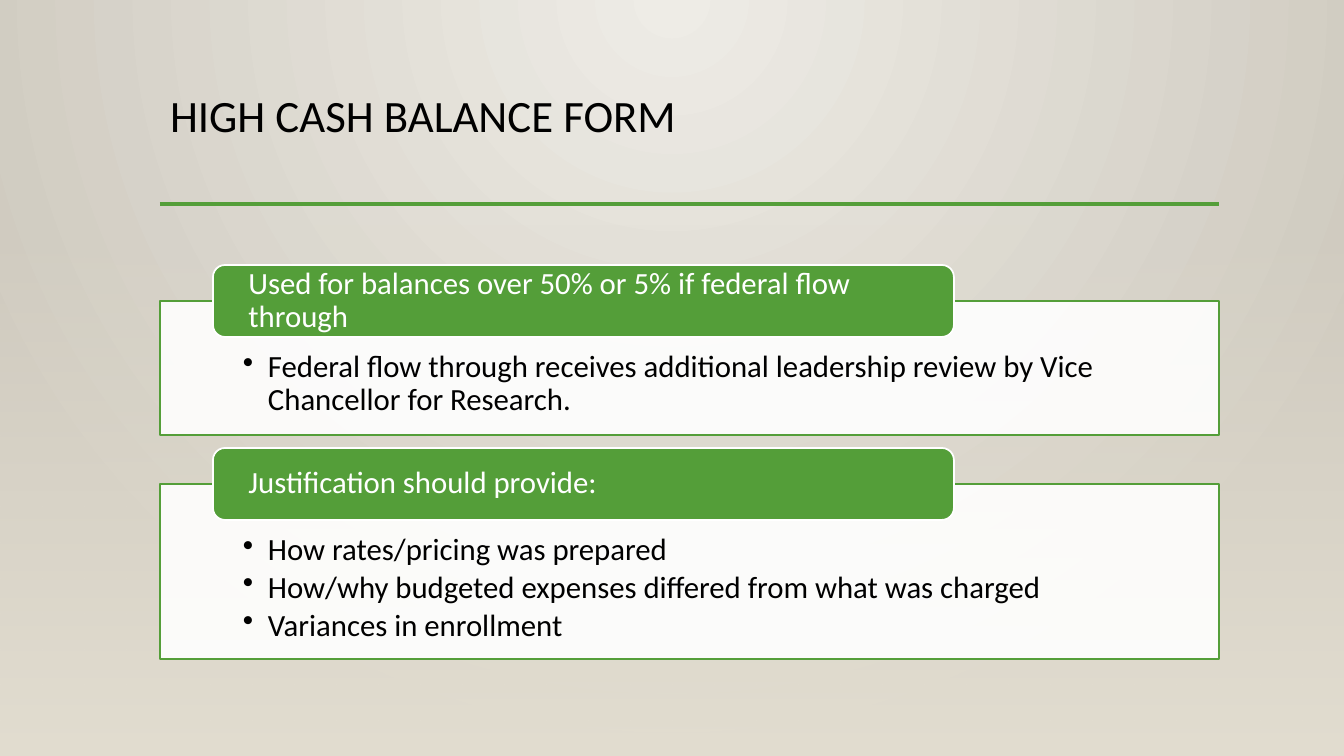
from dataclasses import dataclass

from lxml.etree import SubElement
from pptx import Presentation
from pptx.dml.color import RGBColor
from pptx.enum.shapes import MSO_CONNECTOR as Connector, MSO_SHAPE as Preset
from pptx.enum.text import MSO_ANCHOR as Anchor, MSO_AUTO_SIZE as AutoSize, PP_ALIGN as Align
from pptx.oxml.ns import qn
from pptx.util import Pt

TITLE = "HIGH CASH BALANCE FORM"
SECTIONS = [
    ("Used for balances over 50% or 5% if federal flow through", 134, [
        "Federal flow through receives additional leadership review by Vice Chancellor for Research.",
    ]),
    ("Justification should provide:", 175, [
        "How rates/pricing was prepared",
        "How/why budgeted expenses differed from what was charged",
        "Variances in enrollment",
    ]),
]


@dataclass(frozen=True)
class Theme:
    font: str = "Calibri"
    title_size: int = 32
    body_size: int = 22
    ink: str = "000000"
    paper: str = "FFFFFF"
    accent: str = "549E39"
    glow: tuple = ("EEECE6", "CEC9BE")
    floor: str = "E3DED1"


THEME = Theme()
WIDTH, HEIGHT = 1344, 756
LEFT, CONTENT_WIDTH = 160, 1059
TITLE_TOP, RULE_Y, FLOOR_TOP = 89, 204, 223
FIRST_CARD_TOP, CARD_GAP = 301, 49
TAB_LEFT, TAB_WIDTH, TAB_HEIGHT = 213, 741, 72
BULLET_INDENT = 25
SCALE = 12192000 / WIDTH


def px(length):
    return round(length * SCALE)


def rgb(code):
    return RGBColor.from_string(code)


def set_alpha(color, percent):
    SubElement(color, qn("a:alpha"), val=str(percent * 1000))


def fill_gradient(fill, colors):
    fill.gradient()
    for stop, code in zip(fill.gradient_stops, colors):
        stop.color.rgb = rgb(code)


def add_block(slide, preset, box, fill, line):
    block = slide.shapes.add_shape(preset, *map(px, box))
    block.shadow.inherit = False
    block.fill.solid()
    block.fill.fore_color.rgb = rgb(fill)
    block.line.color.rgb = rgb(line)
    block.line.width = Pt(1.25)
    return block


def write(shape, lines, size, color, insets, anchor, space_after=0, bulleted=False):
    frame = shape.text_frame
    frame.text = "\n".join(lines)
    frame.word_wrap = True
    frame.auto_size = AutoSize.NONE
    frame.vertical_anchor = anchor
    frame.margin_left, frame.margin_top, frame.margin_right, frame.margin_bottom = map(px, insets)
    for paragraph in frame.paragraphs:
        if bulleted:
            props = paragraph._p.get_or_add_pPr()
            props.set("marL", str(px(BULLET_INDENT)))
            props.set("indent", str(-px(BULLET_INDENT)))
            SubElement(props, qn("a:buChar"), char="•")
        paragraph.alignment = Align.LEFT
        paragraph.line_spacing = 0.9
        paragraph.space_after = Pt(space_after)
        for run in paragraph.runs:
            run.font.name = THEME.font
            run.font.size = Pt(size)
            run.font.color.rgb = rgb(color)


def paint_backdrop(slide):
    fill_gradient(slide.background.fill, THEME.glow)
    glow = slide.element.find(".//" + qn("a:gradFill"))
    glow.remove(glow.find(qn("a:lin")))
    radial = SubElement(glow, qn("a:path"), path="circle")
    SubElement(radial, qn("a:fillToRect"), l="43000", t="0", r="43000", b="100000")

    floor = slide.shapes.add_shape(
        Preset.RECTANGLE, *map(px, (0, FLOOR_TOP, WIDTH, HEIGHT - FLOOR_TOP)))
    floor.shadow.inherit = False
    floor.line.fill.background()
    fill_gradient(floor.fill, (THEME.floor, THEME.floor))
    floor.fill.gradient_angle = 270
    set_alpha(floor._element.find(".//" + qn("a:gs"))[0], 0)


def add_heading(slide):
    title = slide.shapes.title
    title.left, title.top, title.width, title.height = map(
        px, (LEFT, TITLE_TOP, CONTENT_WIDTH, RULE_Y - TITLE_TOP))
    write(title, [TITLE], THEME.title_size, THEME.ink, (10, 5, 10, 5), Anchor.TOP)
    rule = slide.shapes.add_connector(
        Connector.STRAIGHT, *map(px, (LEFT, RULE_Y, LEFT + CONTENT_WIDTH, RULE_Y)))
    rule.line.color.rgb = rgb(THEME.accent)
    rule.line.width = Pt(2.5)
    SubElement(rule._element.spPr, qn("a:effectLst"))


def add_section(slide, top, heading, height, points):
    card = add_block(slide, Preset.RECTANGLE, (LEFT, top, CONTENT_WIDTH, height),
                     THEME.paper, THEME.accent)
    set_alpha(card._element.spPr.find(qn("a:solidFill"))[0], 90)
    write(card, points, THEME.body_size, THEME.ink, (83, 50, 83, 17), Anchor.TOP,
          space_after=3.3, bulleted=True)
    tab = add_block(slide, Preset.ROUNDED_RECTANGLE,
                    (TAB_LEFT, top - TAB_HEIGHT / 2, TAB_WIDTH, TAB_HEIGHT),
                    THEME.accent, THEME.paper)
    write(tab, [heading], THEME.body_size, THEME.paper, (32, 0, 32, 0), Anchor.MIDDLE)


def main():
    deck = Presentation()
    deck.slide_width, deck.slide_height = px(WIDTH), px(HEIGHT)
    slide = deck.slides.add_slide(deck.slide_layouts[5])
    paint_backdrop(slide)
    add_heading(slide)
    top = FIRST_CARD_TOP
    for heading, height, points in SECTIONS:
        add_section(slide, top, heading, height, points)
        top += height + CARD_GAP
    deck.save("out.pptx")


if __name__ == "__main__":
    main()
